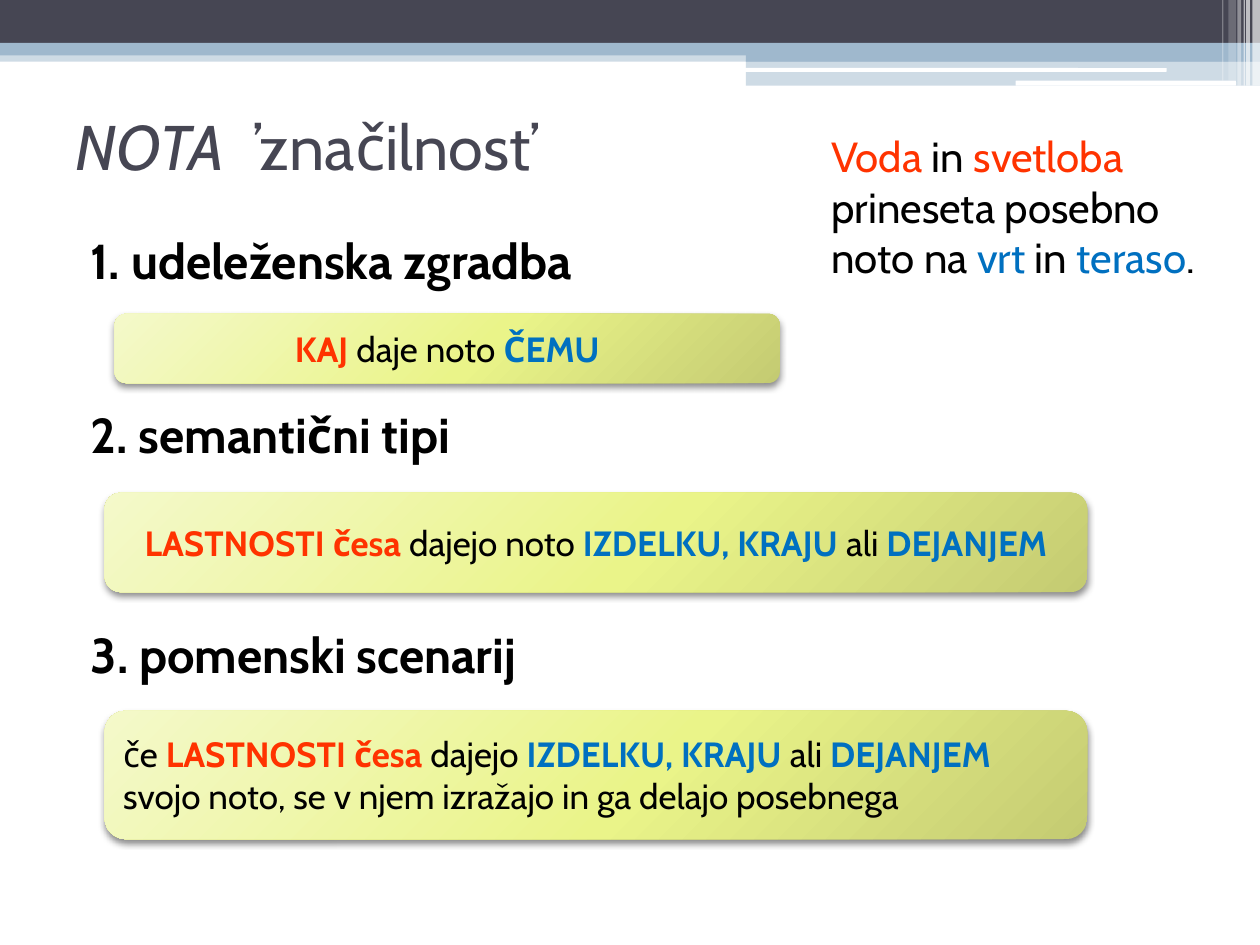
"""Build the slide on the noun 'nota': participants, semantic types and scenario."""
from dataclasses import dataclass

from lxml import etree
from pptx import Presentation
from pptx.dml.color import RGBColor
from pptx.enum.shapes import MSO_SHAPE
from pptx.enum.text import MSO_ANCHOR, MSO_AUTO_SIZE, PP_ALIGN
from pptx.oxml import parse_xml
from pptx.oxml.ns import qn
from pptx.util import Inches, Pt

RECT, ROUND = MSO_SHAPE.RECTANGLE, MSO_SHAPE.ROUNDED_RECTANGLE
TOP, MIDDLE = MSO_ANCHOR.TOP, MSO_ANCHOR.MIDDLE
LEFT, CENTER = PP_ALIGN.LEFT, PP_ALIGN.CENTER
NO_FIT = MSO_AUTO_SIZE.NONE
NS = "http://schemas.openxmlformats.org/drawingml/2006/main"


@dataclass(frozen=True)
class Theme:
    font: str = "Cabin"
    dark: str = "464653"
    band: str = "9FB8CD"
    white: str = "FFFFFF"
    black: str = "000000"
    agent: str = "FF3300"
    target: str = "0070C0"
    panel: tuple = ((0, "F4F9CA"), (55, "EAF489"), (100, "C4CB72"))
    title_size: int = 36
    heading_size: int = 28
    example_size: int = 24
    panel_size: int = 20


T = Theme()


def add_text(p, text, size, color=T.black, bold=False, italic=False):
    r = p.add_run()
    r.text = text
    r.font.name = T.font
    r.font.size = Pt(size)
    r.font.color.rgb = RGBColor.from_string(color)
    r.font.bold = bold
    r.font.italic = italic


prs = Presentation()
prs.slide_width, prs.slide_height = Inches(10), Inches(7.5)
s = prs.slides.add_slide(prs.slide_layouts[1])
title, body = s.placeholders

bars = [
    (RECT, 0, 0.4, 10, 0.09, T.band, 50),
    (RECT, 0, 0, 10, 0.34, T.dark, 100),
    (RECT, 0, 0.34, 10, 0.1, T.band, 100),
    (RECT, 5.92, 0.39, 4.08, 0.1, T.band, 100),
    (RECT, 5.92, 0.48, 4.08, 0.2, T.band, 50),
    (ROUND, 5.91, 0.54, 3.35, 0.03, T.white, 100),
    (ROUND, 8.06, 0.64, 1.75, 0.04, T.white, 100),
    (RECT, 9.94, 0, 0.06, 0.68, T.white, 65),
    (RECT, 9.89, 0, 0.03, 0.68, T.white, 65),
    (RECT, 9.87, 0, 0.01, 0.68, T.white, 60),
    (RECT, 9.82, 0, 0.03, 0.68, T.white, 40),
    (RECT, 9.75, 0, 0.06, 0.64, T.white, 20),
    (RECT, 9.7, 0, 0.01, 0.64, T.white, 30),
]
for kind, x, y, w, h, color, opacity in bars:
    sp = s.shapes.add_shape(kind, Inches(x), Inches(y), Inches(w), Inches(h))
    sp.shadow.inherit = False
    sp.line.fill.background()
    sp.fill.solid()
    sp.fill.fore_color.rgb = RGBColor.from_string(color)
    if opacity < 100:
        clr = sp.fill._xPr.find(".//" + qn("a:srgbClr"))
        etree.SubElement(clr, qn("a:alpha"), val=str(opacity * 1000))

title.left, title.top, title.width, title.height = map(Inches, (0.5, 0.68, 9, 0.94))
tf = title.text_frame
tf.auto_size = NO_FIT
tf.vertical_anchor = MIDDLE
p = tf.paragraphs[0]
p.alignment = LEFT
add_text(p, "NOTA ", T.title_size, T.dark, italic=True)
add_text(p, " ’značilnost’", T.title_size, T.dark)

body.left, body.top, body.width, body.height = map(Inches, (0.5, 1.78, 9, 5.41))
tf = body.text_frame
tf.auto_size = NO_FIT
tf.vertical_anchor = TOP
headings = [("1. udeleženska zgradba", 3), ("2. semantični tipi", 66), ("3. pomenski scenarij", 92)]
for i, (text, gap) in enumerate(headings):
    p = tf.add_paragraph() if i else tf.paragraphs[0]
    p.space_before = Pt(gap)
    pPr = p._p.get_or_add_pPr()
    pPr.set("marL", str(Inches(0.4)))
    pPr.set("indent", str(Inches(-0.28)))
    etree.SubElement(pPr, qn("a:buNone"))
    add_text(p, text, T.heading_size, bold=True)

stops = "".join(
    f'<a:gs pos="{pos * 1000}"><a:srgbClr val="{color}"/></a:gs>' for pos, color in T.panel
)
gradient = (
    f'<a:gradFill xmlns:a="{NS}" rotWithShape="1"><a:gsLst>{stops}</a:gsLst><a:path path="circle">'
    '<a:fillToRect l="-40000" t="-90000" r="140000" b="190000"/></a:path></a:gradFill>'
)
shadow = (
    f'<a:outerShdw xmlns:a="{NS}" blurRad="{Pt(4)}" dist="{Pt(2)}" dir="5400000" rotWithShape="0">'
    f'<a:srgbClr val="{T.black}"><a:alpha val="45000"/></a:srgbClr></a:outerShdw>'
)
agent = {"color": T.agent, "bold": True}
target = {"color": T.target, "bold": True}
panels = [
    (0.91, 2.49, 5.28, 0.55, CENTER,
     [("KAJ", agent), (" daje noto ", {}), ("ČEMU", target)]),
    (0.83, 3.91, 7.8, 0.79, CENTER,
     [("LASTNOSTI česa ", agent), ("dajejo noto ", {}), ("IZDELKU, KRAJU ", target),
      ("ali", {}), (" DEJANJEM", target)]),
    (0.83, 5.64, 7.8, 1.02, LEFT,
     [("če ", {}), ("LASTNOSTI česa", agent), (" dajejo ", {}), ("IZDELKU, KRAJU ", target),
      ("ali", {}), (" DEJANJEM ", target),
      ("svojo noto, se v njem izražajo in ga delajo posebnega", {})]),
]
for x, y, w, h, align, runs in panels:
    sp = s.shapes.add_shape(ROUND, Inches(x), Inches(y), Inches(w), Inches(h))
    sp.line.fill.background()
    sp.shadow.inherit = False
    sp.fill.background()
    spPr = sp._element.spPr
    spPr.replace(spPr.find(qn("a:noFill")), parse_xml(gradient))
    spPr.find(qn("a:effectLst")).append(parse_xml(shadow))
    tf = sp.text_frame
    tf.word_wrap = True
    tf.vertical_anchor = MIDDLE
    p = tf.paragraphs[0]
    p.alignment = align
    for text, fmt in runs:
        add_text(p, text, T.panel_size, **fmt)

example = [
    ("Voda", T.agent), (" in ", T.black), ("svetloba ", T.agent),
    ("prineseta posebno noto na ", T.black), ("vrt", T.target), (" in ", T.black),
    ("teraso", T.target), (".", T.black),
]
sp = s.shapes.add_textbox(Inches(6.5), Inches(0.99), Inches(3.23), Inches(1.72))
tf = sp.text_frame
tf.word_wrap = True
for text, color in example:
    add_text(tf.paragraphs[0], text, T.example_size, color)

prs.save("out.pptx")
